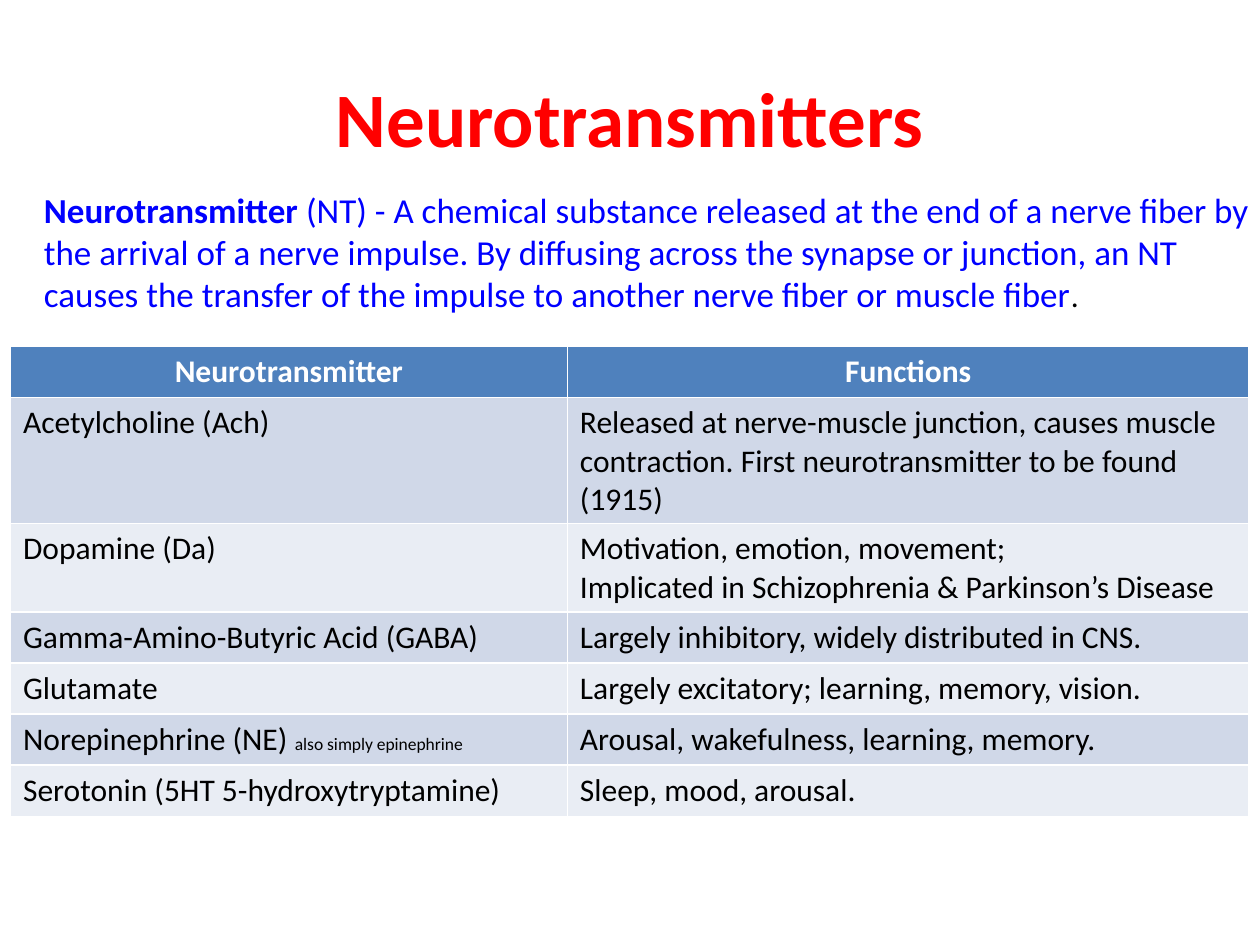
from dataclasses import dataclass

from pptx import Presentation
from pptx.dml.color import RGBColor
from pptx.enum.text import MSO_ANCHOR, MSO_AUTO_SIZE, PP_ALIGN
from pptx.util import Pt

COLORS = {
    "title": "FF0000",
    "definition": "0000FF",
    "text": "000000",
    "header_text": "FFFFFF",
    "header": "4F81BD",
    "odd_row": "D0D8E8",
    "even_row": "E9EDF4",
}
FONT = "Calibri"
ROW_HEIGHT = 29.2
COLUMN_WIDTHS = (318.24, 389.52)


@dataclass
class Span:
    text: str
    size: float = 18
    color: str = "text"
    bold: bool = False


Lines = list[list[Span]]


@dataclass
class Transmitter:
    name: list[Span]
    functions: Lines


HEADERS = ("Neurotransmitter", "Functions")
DEFINITION = [
    [
        Span("Neurotransmitter", 20, "definition", True),
        Span(" (NT) - A chemical substance released at the end of a nerve fiber by", 20, "definition"),
    ],
    [Span("the arrival of a nerve impulse. By diffusing across the synapse or junction, an NT", 20, "definition")],
    [
        Span("causes the transfer of the impulse to another nerve fiber or muscle fiber", 20, "definition"),
        Span("."),
    ],
]
TRANSMITTERS = [
    Transmitter(
        [Span("Acetylcholine (Ach)")],
        [[Span("Released at nerve-muscle junction, causes muscle contraction. "
               "First neurotransmitter to be found (1915)")]],
    ),
    Transmitter(
        [Span("Dopamine (Da)")],
        [[Span("Motivation, emotion, movement;")],
         [Span("Implicated in Schizophrenia & Parkinson’s Disease")]],
    ),
    Transmitter(
        [Span("Gamma-Amino-Butyric Acid (GABA)")],
        [[Span("Largely inhibitory, widely distributed in CNS.")]],
    ),
    Transmitter(
        [Span("Glutamate")],
        [[Span("Largely excitatory; learning, memory, vision.")]],
    ),
    Transmitter(
        [Span("Norepinephrine (NE) "), Span("also simply epinephrine", 10)],
        [[Span("Arousal, wakefulness, learning, memory.")]],
    ),
    Transmitter(
        [Span("Serotonin (5HT 5-hydroxytryptamine)")],
        [[Span("Sleep, mood, arousal.")]],
    ),
]


def rgb(name: str) -> RGBColor:
    return RGBColor.from_string(COLORS[name])


def write_lines(tf, lines: Lines, align=PP_ALIGN.LEFT) -> None:
    """Write one paragraph per line and one run per span."""
    for i, line in enumerate(lines):
        p = tf.add_paragraph() if i else tf.paragraphs[0]
        p.alignment = align
        for span in line:
            r = p.add_run()
            r.text = span.text
            r.font.name = FONT
            r.font.size = Pt(span.size)
            r.font.bold = span.bold
            r.font.color.rgb = rgb(span.color)


def fill_cell(cell, lines: Lines, fill: str, align=PP_ALIGN.LEFT) -> None:
    cell.fill.solid()
    cell.fill.fore_color.rgb = rgb(fill)
    write_lines(cell.text_frame, lines, align)


def add_title(slide) -> None:
    sp = slide.shapes.add_textbox(Pt(36), Pt(21.6), Pt(648), Pt(90))
    tf = sp.text_frame
    tf.word_wrap = True
    tf.vertical_anchor = MSO_ANCHOR.MIDDLE
    write_lines(tf, [[Span("Neurotransmitters", 44, "title", True)]], PP_ALIGN.CENTER)


def add_transmitter_table(slide) -> None:
    rows = len(TRANSMITTERS) + 1
    table = slide.shapes.add_table(
        rows, len(HEADERS), Pt(6), Pt(198), Pt(sum(COLUMN_WIDTHS)), Pt(rows * ROW_HEIGHT)
    ).table
    for column, width in zip(table.columns, COLUMN_WIDTHS):
        column.width = Pt(width)
    for row in table.rows:
        row.height = Pt(ROW_HEIGHT)
    for col, header in enumerate(HEADERS):
        span = Span(header, color="header_text", bold=True)
        fill_cell(table.cell(0, col), [[span]], "header", PP_ALIGN.CENTER)
    for row, item in enumerate(TRANSMITTERS, start=1):
        fill = "odd_row" if row % 2 else "even_row"
        fill_cell(table.cell(row, 0), [item.name], fill)
        fill_cell(table.cell(row, 1), item.functions, fill)


def add_definition(slide) -> None:
    sp = slide.shapes.add_textbox(Pt(18), Pt(104), Pt(712.8), Pt(80))
    tf = sp.text_frame
    tf.word_wrap = False
    tf.auto_size = MSO_AUTO_SIZE.SHAPE_TO_FIT_TEXT
    write_lines(tf, DEFINITION)


def main() -> None:
    prs = Presentation()
    prs.slide_width, prs.slide_height = Pt(720), Pt(540)
    slide = prs.slides.add_slide(prs.slide_layouts[6])
    add_title(slide)
    add_transmitter_table(slide)
    add_definition(slide)
    prs.save("out.pptx")


if __name__ == "__main__":
    main()
